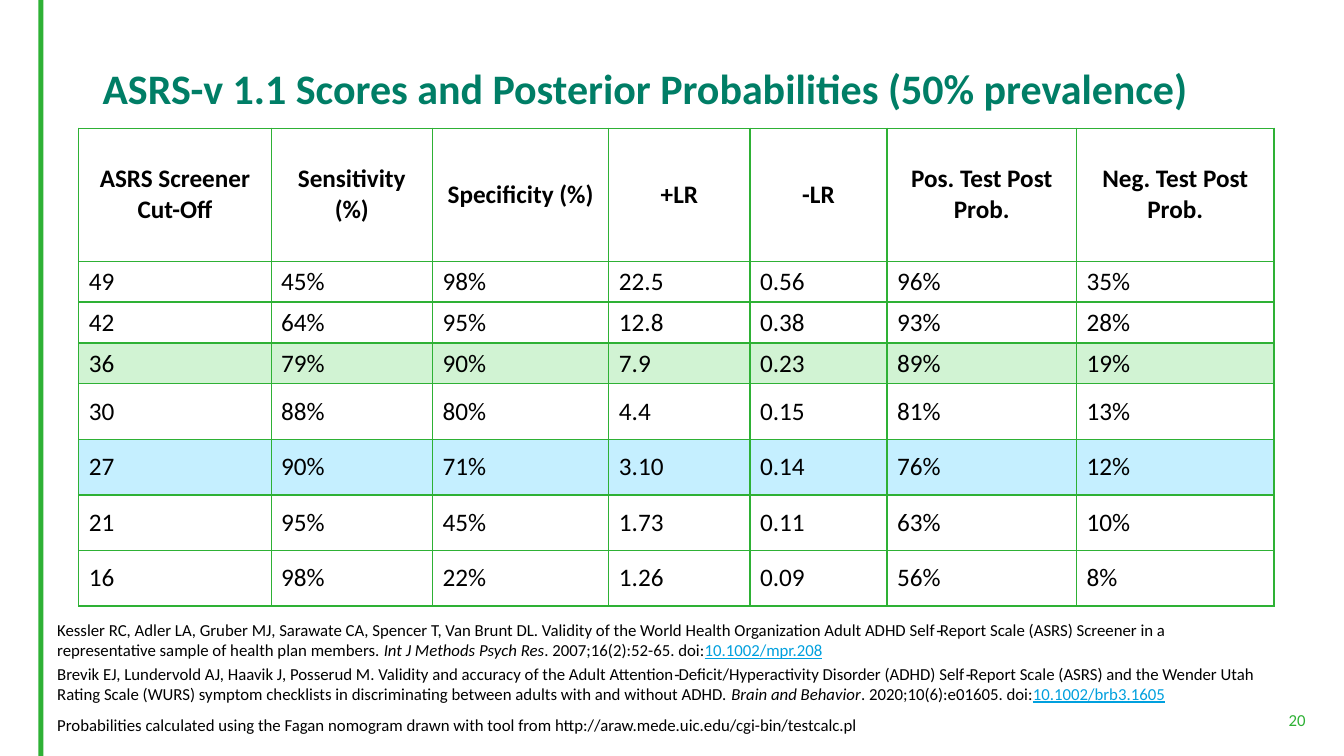
from lxml.etree import SubElement
from pptx import Presentation
from pptx.dml.color import RGBColor
from pptx.enum.shapes import MSO_SHAPE as Preset
from pptx.enum.text import MSO_ANCHOR as Anchor, PP_ALIGN as Align
from pptx.oxml.ns import qn
from pptx.util import Pt

GREEN, TEAL, LINK, BLACK, WHITE = "2EB135", "007E66", "00A0DE", "000000", "FFFFFF"
PLAIN, ITALIC, DOI = {}, {"italic": True}, {"color": LINK, "underline": True}

HEADERS = ["ASRS Screener Cut-Off", "Sensitivity (%)", "Specificity (%)", "+LR", "-LR",
           "Pos. Test Post Prob.", "Neg. Test Post Prob."]
SCORES = [
    ["49", "45%", "98%", "22.5", "0.56", "96%", "35%"],
    ["42", "64%", "95%", "12.8", "0.38", "93%", "28%"],
    ["36", "79%", "90%", "7.9", "0.23", "89%", "19%"],
    ["30", "88%", "80%", "4.4", "0.15", "81%", "13%"],
    ["27", "90%", "71%", "3.10", "0.14", "76%", "12%"],
    ["21", "95%", "45%", "1.73", "0.11", "63%", "10%"],
    ["16", "98%", "22%", "1.26", "0.09", "56%", "8%"],
]
HIGHLIGHTS = {"36": "D1F3D3", "27": "C5EFFF"}
COLUMN_WIDTHS = [137.5, 115.2, 126, 100.8, 97.9, 135.4, 141.1]
ROW_HEIGHTS = [95] + [29.2] * 3 + [39.7] * 4

TEXTS = [
    {"box": (66.2, 28.8, 828, 72), "size": 30, "color": TEAL, "bold": True,
     "anchor": Anchor.MIDDLE, "spacing": 0.9,
     "runs": [("ASRS-v 1.1 Scores and Posterior Probabilities (50% prevalence)", PLAIN)]},
    {"box": (689, 503.3, 250.6, 21.6), "color": GREEN, "anchor": Anchor.BOTTOM,
     "align": Align.RIGHT, "runs": [("20", PLAIN)]},
    {"box": (33.8, 506.9, 664.6, 21.6),
     "runs": [("Probabilities calculated using the Fagan nomogram drawn with tool from "
               "http://araw.mede.uic.edu/cgi-bin/testcalc.pl", PLAIN)]},
    {"box": (33.8, 439.2, 828, 36),
     "runs": [("Kessler RC, Adler LA, Gruber MJ, Sarawate CA, Spencer T, Van Brunt DL. "
               "Validity of the World Health Organization Adult ADHD Self‐Report Scale (ASRS) "
               "Screener in a representative sample of health plan members. ", PLAIN),
              ("Int J Methods Psych Res", ITALIC),
              (". 2007;16(2):52-65. doi:", PLAIN),
              ("10.1002/mpr.208", DOI)]},
    {"box": (33.8, 470.2, 890, 36),
     "runs": [("Brevik EJ, Lundervold AJ, Haavik J, Posserud M. Validity and accuracy of the "
               "Adult Attention‐Deficit/Hyperactivity Disorder (ADHD) Self‐Report Scale (ASRS) "
               "and the Wender Utah Rating Scale (WURS) symptom checklists in discriminating "
               "between adults with and without ADHD. ", PLAIN),
              ("Brain and Behavior", ITALIC),
              (". 2020;10(6):e01605. doi:", PLAIN),
              ("10.1002/brb3.1605", DOI)]},
]


def rgb(value):
    return RGBColor.from_string(value)


def add_run(paragraph, text, size=12, color=BLACK, **formats):
    run = paragraph.add_run()
    run.text = text
    run.font.color.rgb = rgb(color)
    for name, value in {"name": "Calibri", "size": Pt(size), **formats}.items():
        setattr(run.font, name, value)


def add_text(slide, box, runs, anchor=Anchor.TOP, align=Align.LEFT, spacing=1.0, **formats):
    frame = slide.shapes.add_textbox(*map(Pt, box)).text_frame
    frame.word_wrap = True
    frame.vertical_anchor = anchor
    paragraph = frame.paragraphs[0]
    paragraph.alignment = align
    paragraph.line_spacing = spacing
    for text, changes in runs:
        add_run(paragraph, text, **{**formats, **changes})


def add_borders(cell):
    properties = cell._tc.get_or_add_tcPr()
    for side in ("lnL", "lnR", "lnT", "lnB"):
        line = SubElement(properties, qn(f"a:{side}"), w=str(Pt(1)))
        SubElement(SubElement(line, qn("a:solidFill")), qn("a:srgbClr"), val=GREEN)


def fill_cell(cell, text, fill, header):
    add_borders(cell)
    cell.fill.solid()
    cell.fill.fore_color.rgb = rgb(fill)
    cell.vertical_anchor = Anchor.MIDDLE
    paragraph = cell.text_frame.paragraphs[0]
    paragraph.alignment = Align.CENTER if header else Align.LEFT
    add_run(paragraph, text, size=18, bold=header)


def add_score_table(slide):
    rows = [HEADERS] + SCORES
    box = (56.2, 91.6, sum(COLUMN_WIDTHS), sum(ROW_HEIGHTS))
    table = slide.shapes.add_table(len(rows), len(HEADERS), *map(Pt, box)).table
    table.first_row = table.horz_banding = False
    for column, width in zip(table.columns, COLUMN_WIDTHS):
        column.width = Pt(width)
    for index, (row, height, values) in enumerate(zip(table.rows, ROW_HEIGHTS, rows)):
        row.height = Pt(height)
        for cell, value in zip(row.cells, values):
            fill_cell(cell, value, HIGHLIGHTS.get(values[0], WHITE), index == 0)


def main():
    presentation = Presentation()
    presentation.slide_width, presentation.slide_height = Pt(960), Pt(540)
    slide = presentation.slides.add_slide(presentation.slide_layouts[6])
    side_bar = slide.shapes.add_shape(Preset.RECTANGLE, Pt(27.4), 0, Pt(3.6), Pt(540))
    side_bar.shadow.inherit = False
    side_bar.fill.solid()
    side_bar.fill.fore_color.rgb = rgb(GREEN)
    side_bar.line.fill.background()
    add_score_table(slide)
    for text in TEXTS:
        add_text(slide, **text)
    presentation.save("out.pptx")


if __name__ == "__main__":
    main()
